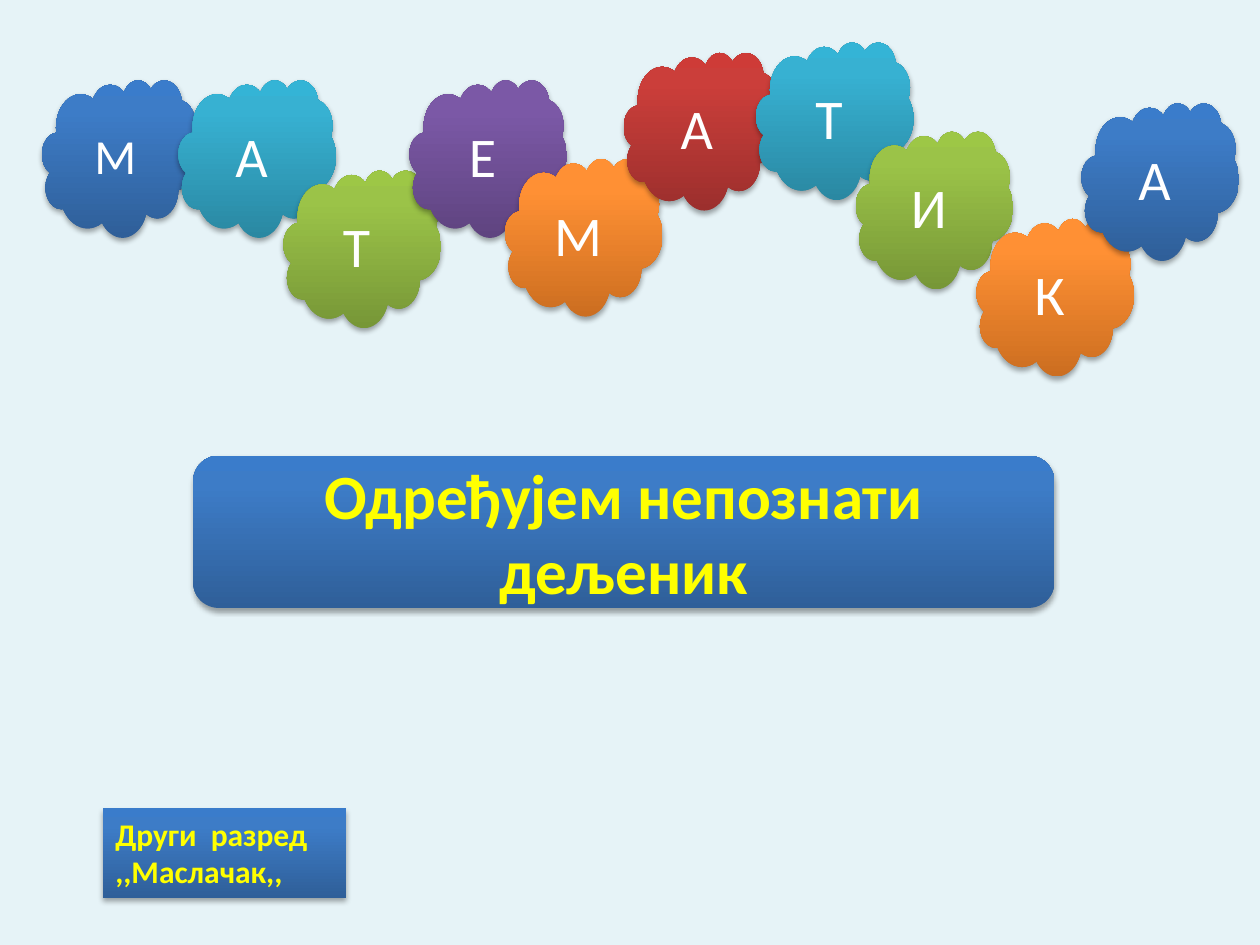
from lxml import etree
from copy import deepcopy
from pptx import Presentation
from pptx.dml.color import RGBColor
from pptx.enum.shapes import MSO_SHAPE
from pptx.enum.text import MSO_ANCHOR, PP_ALIGN
from pptx.oxml import parse_xml
from pptx.oxml.ns import nsdecls, qn
from pptx.util import Inches, Pt

CLOUD, RECTANGLE, ROUNDED = MSO_SHAPE.CLOUD, MSO_SHAPE.RECTANGLE, MSO_SHAPE.ROUNDED_RECTANGLE
LEFT, CENTER = PP_ALIGN.LEFT, PP_ALIGN.CENTER
TOP, MIDDLE = MSO_ANCHOR.TOP, MSO_ANCHOR.MIDDLE

COLORS = {"background": "E6F3F7", "letter": "FFFFFF", "heading": "FFFF00"}
GRADIENTS = {
    "blue": ("2F5F99", "3D7CC7", "3A7CCB"),
    "teal": ("2A88A2", "37B1D2", "34B4D6"),
    "green": ("779737", "9BC348", "9DC746"),
    "purple": ("5F4480", "7B58A6", "7C57A8"),
    "orange": ("CC6E20", "FF9034", "FF9136"),
    "red": ("9C2F2D", "CB3E3A", "CE3B37"),
}
STOPS = (0, 0.8, 1)
SHADOW = (
    f'<a:outerShdw {nsdecls("a")} blurRad="40000" dist="23000" dir="5400000" rotWithShape="0">'
    '<a:srgbClr val="000000"><a:alpha val="35000"/></a:srgbClr></a:outerShdw>'
)

deck = Presentation()
deck.slide_width, deck.slide_height = Inches(10), Inches(7.5)
CELL = deck.slide_width / 120
page = deck.slides.add_slide(deck.slide_layouts[6])
page.background.fill.solid()
page.background.fill.fore_color.rgb = RGBColor.from_string(COLORS["background"])


def add_box(kind, cells, gradient, lines, size, color, bold=False, align=CENTER, anchor=MIDDLE):
    box = page.shapes.add_shape(kind, *(round(cell * CELL) for cell in cells))
    box.line.fill.background()
    box.fill.gradient()
    box.fill.gradient_angle = 90
    stop_list = box._element.spPr.find(qn("a:gradFill")).find(qn("a:gsLst"))
    stop_list.insert(1, deepcopy(stop_list[0]))
    for stop, position, shade in zip(box.fill.gradient_stops, STOPS, GRADIENTS[gradient]):
        stop.position = position
        stop.color.rgb = RGBColor.from_string(shade)
    box.shadow.inherit = False
    box._element.spPr.find(qn("a:effectLst")).append(parse_xml(SHADOW))

    frame = box.text_frame
    frame.word_wrap = True
    frame.vertical_anchor = anchor
    frame.text = "\n".join(lines)
    for para in frame.paragraphs:
        para.alignment = align
        para.font.name = "Calibri"
        para.font.size = Pt(size)
        para.font.bold = bold
        para.font.color.rgb = RGBColor.from_string(COLORS[color])


add_box(RECTANGLE, (9.8, 77, 23.2, 8.5), "blue", ("Други  разред", ",,Маслачак,,"),
        18, "heading", True, LEFT, TOP)

CLOUD_SIZE = 15
LETTERS = [
    ("М", 4, 7.6, "blue", 28),
    ("А", 17, 7.6, "teal", 32),
    ("Т", 27, 16.2, "green", 32),
    ("Е", 39, 7.6, "purple", 32),
    ("М", 48.1, 15.1, "orange", 32),
    ("А", 59.4, 5, "red", 32),
    ("Т", 72, 4, "teal", 32),
    ("И", 81.5, 12.5, "green", 32),
    ("К", 93, 20.8, "orange", 32),
    ("А", 103, 9.8, "blue", 32),
]
for letter, column, row, gradient, size in LETTERS:
    add_box(CLOUD, (column, row, CLOUD_SIZE, CLOUD_SIZE), gradient, (letter,), size, "letter")

add_box(ROUNDED, (18.4, 43.4, 82, 14.5), "blue", ("Одређујем непознати", "дељеник"),
        36, "heading", True)

deck.save("out.pptx")
